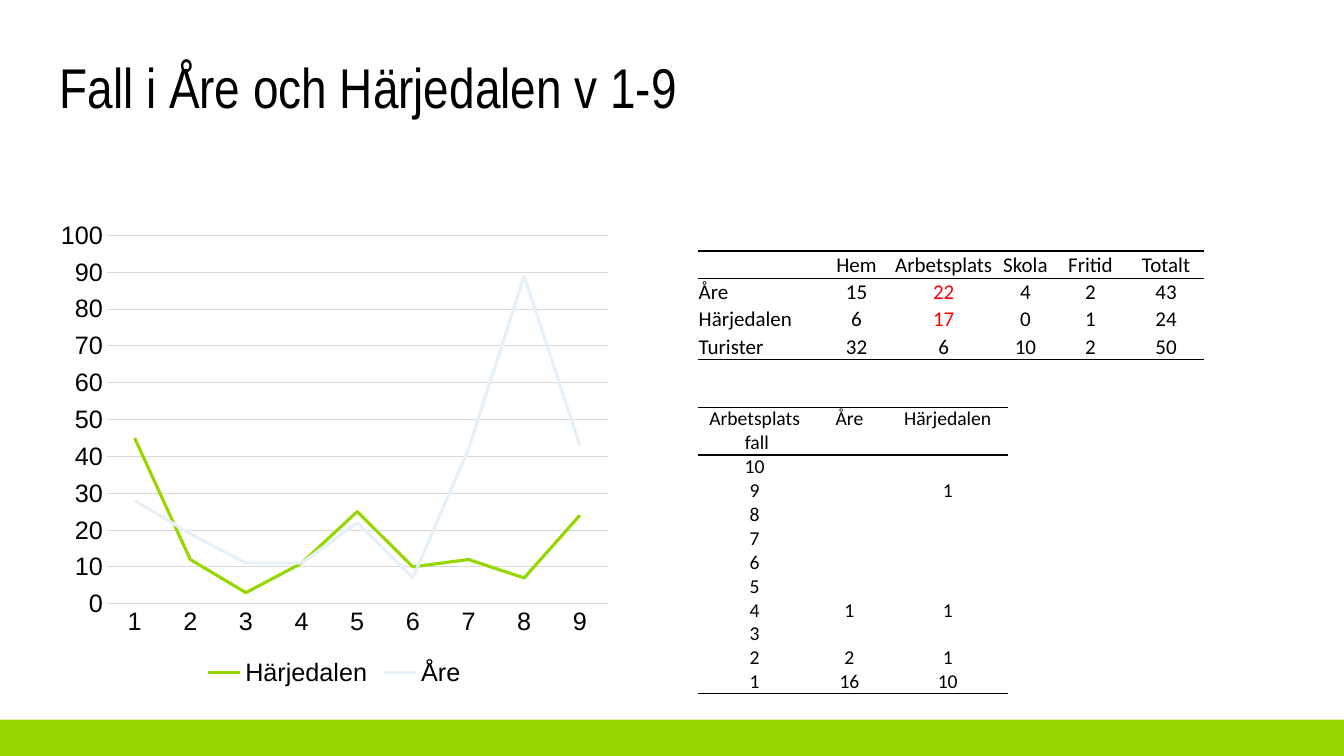
from lxml.etree import SubElement
from pptx import Presentation
from pptx.chart.data import CategoryChartData
from pptx.dml.color import RGBColor
from pptx.enum.chart import XL_CHART_TYPE as CHART, XL_LEGEND_POSITION as LEGEND
from pptx.enum.chart import XL_TICK_MARK as TICK
from pptx.enum.shapes import MSO_SHAPE as SHAPE
from pptx.enum.text import MSO_ANCHOR as ANCHOR, MSO_AUTO_SIZE as AUTO, PP_ALIGN as ALIGN
from pptx.oxml.ns import qn
from pptx.util import Inches, Pt

COLORS = {"text": "000000", "green": "97D700", "pale": "E6F0F9",
          "grid": "D9D9D9", "red": "FF0000"}
NO_STYLE = "{2D5ABB26-0587-4C30-8999-92F81FD0307C}"

PLACES = [
    ["", "Hem", "Arbetsplats", "Skola", "Fritid", "Totalt"],
    ["Åre", "15", "22", "4", "2", "43"],
    ["Härjedalen", "6", "17", "0", "1", "24"],
    ["Turister", "32", "6", "10", "2", "50"],
]
WORKPLACE_CASES = {9: ("", "1"), 4: ("1", "1"), 2: ("2", "1"), 1: ("16", "10")}
WORKPLACES = [["Arbetsplats\v fall", "Åre", "Härjedalen"]] + [
    [str(n), *WORKPLACE_CASES.get(n, ("", ""))] for n in range(10, 0, -1)]
WEEKLY = {
    "Härjedalen": ("green", [45, 12, 3, 11, 25, 10, 12, 7, 24]),
    "Åre": ("pale", [28, 19, 11, 11, 22, 7, 42, 89, 43]),
}


def rgb(name):
    return RGBColor.from_string(COLORS[name])


def set_attrs(obj, **values):
    for name, value in values.items():
        setattr(obj, name, value)


def set_font(font, name, size, color="text"):
    set_attrs(font, name=name, size=Pt(size))
    font.color.rgb = rgb(color)


def set_line(line, color, width):
    line.color.rgb = rgb(color)
    line.width = Pt(width)


def add_title(s, text):
    sp = s.shapes.title
    set_attrs(sp, left=Inches(0.49), top=Inches(0.54),
              width=Inches(11.44), height=Inches(0.71))
    tf = sp.text_frame
    tf.text = text
    set_attrs(tf, vertical_anchor=ANCHOR.MIDDLE, auto_size=AUTO.NONE)
    p = tf.paragraphs[0]
    set_attrs(p, alignment=ALIGN.LEFT, line_spacing=0.9)
    set_font(p.runs[0].font, "Arial Narrow", 40)


def add_band(s):
    sp = s.shapes.add_shape(SHAPE.RECTANGLE, 0, Inches(7.14), Inches(13.33), Inches(0.36))
    sp.shadow.inherit = False
    sp.fill.solid()
    sp.fill.fore_color.rgb = rgb("green")
    sp.line.fill.background()


def add_border(cell, side):
    ln = SubElement(cell._tc.get_or_add_tcPr(), qn(f"a:ln{side}"), w=str(Pt(1)))
    SubElement(SubElement(ln, qn("a:solidFill")), qn("a:srgbClr"), val=COLORS["text"])


def fill_cell(cell, text, size, color, align):
    cell.text_frame.text = text
    p = cell.text_frame.paragraphs[0]
    p.alignment = align
    for r in p.runs:
        set_font(r.font, "Calibri", size, color)
    # Sizes the line break and keeps an empty row as low as a filled one
    for br in p._p.findall(qn("a:br")):
        SubElement(br, qn("a:rPr"), sz=str(size * 100))
    if not text:
        SubElement(p._p, qn("a:endParaRPr"), sz=str(size * 100))
    cell.fill.background()


def add_table(s, rows, left, top, widths, heights, size, margin=0,
              head_anchor=ANCHOR.BOTTOM, first_align=ALIGN.CENTER, red=()):
    frame = s.shapes.add_table(len(rows), len(widths), Inches(left), Inches(top),
                               Inches(sum(widths)), Inches(sum(heights)))
    table = frame.table
    set_attrs(table, first_row=False, horz_banding=False)
    table._tbl.tblPr.find(qn("a:tableStyleId")).text = NO_STYLE
    for column, width in zip(table.columns, widths):
        column.width = Inches(width)
    for i, (row, height) in enumerate(zip(rows, heights)):
        table.rows[i].height = Inches(height)
        for j, text in enumerate(row):
            cell = table.cell(i, j)
            set_attrs(cell, margin_left=Inches(margin), margin_right=Inches(margin),
                      margin_top=Inches(margin), margin_bottom=0,
                      vertical_anchor=ANCHOR.BOTTOM if i else head_anchor)
            if i == 0:
                add_border(cell, "T")
            if i in (0, len(rows) - 1):
                add_border(cell, "B")
            fill_cell(cell, text, size, "red" if (i, j) in red else "text",
                      ALIGN.CENTER if j else first_align)


def add_line_chart(s):
    data = CategoryChartData()
    data.categories = [str(week) for week in range(1, 10)]
    for name, (_, values) in WEEKLY.items():
        data.add_series(name, values)
    chart = s.shapes.add_chart(CHART.LINE, Inches(0.49), Inches(2.1),
                               Inches(5.65), Inches(4.76), data).chart
    set_font(chart.font, "Arial", 18)
    set_attrs(chart, has_title=False, has_legend=True)
    set_attrs(chart.legend, position=LEGEND.BOTTOM, include_in_layout=False)
    chart.plots[0].vary_by_categories = False

    # Series
    for series, (color, _) in zip(chart.plots[0].series, WEEKLY.values()):
        series.smooth = False
        set_line(series.format.line, color, 2.25)

    # Axes
    cat, val = chart.category_axis, chart.value_axis
    for axis in (cat, val):
        set_attrs(axis, major_tick_mark=TICK.NONE, minor_tick_mark=TICK.NONE)
    set_attrs(val, minimum_scale=0, maximum_scale=100, major_unit=10,
              has_major_gridlines=True)
    set_line(cat.format.line, "grid", 0.75)
    set_line(val.major_gridlines.format.line, "grid", 0.75)
    val.format.line.fill.background()


def main():
    prs = Presentation()
    set_attrs(prs, slide_width=Inches(13.33), slide_height=Inches(7.5))
    s = prs.slides.add_slide(prs.slide_layouts[5])

    add_band(s)
    add_title(s, "Fall i Åre och Härjedalen v 1-9")
    # Cases by place of infection
    add_table(s, PLACES, 6.92, 2.49, [1.25, 0.65, 1.08, 0.54, 0.75, 0.75], [0.27] * 4,
              15, margin=0.01, first_align=ALIGN.LEFT, red={(1, 2), (2, 2)})
    # Cases by week
    add_line_chart(s)
    # Workplaces by number of cases
    add_table(s, WORKPLACES, 6.92, 4.04, [1.13, 0.75, 1.2], [0.47] + [0.23] * 10,
              14, head_anchor=ANCHOR.TOP)
    prs.save("out.pptx")


if __name__ == "__main__":
    main()
